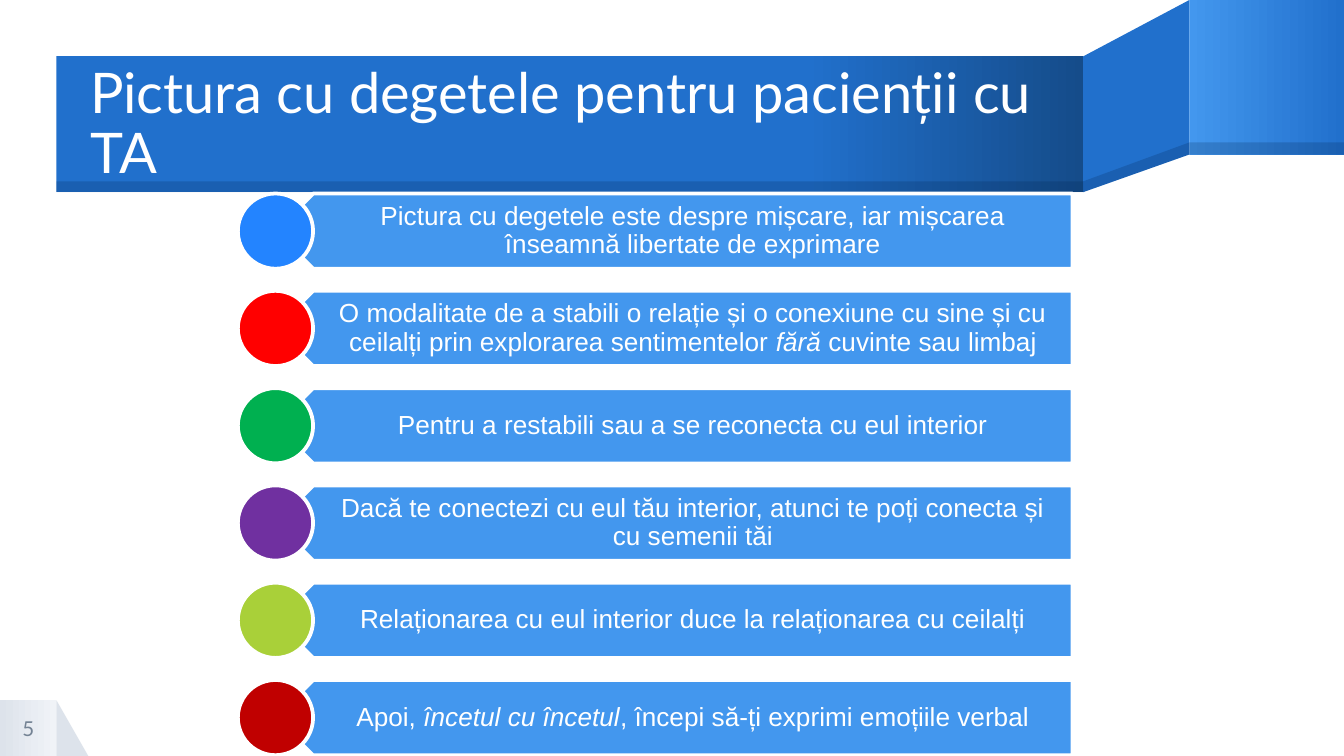
from copy import deepcopy

from lxml import etree
from pptx import Presentation
from pptx.dml.color import RGBColor
from pptx.enum.shapes import MSO_SHAPE
from pptx.enum.text import MSO_ANCHOR, MSO_AUTO_SIZE, PP_ALIGN
from pptx.oxml.ns import qn
from pptx.util import Inches, Pt

RECT, TRIANGLE = MSO_SHAPE.RECTANGLE, MSO_SHAPE.RIGHT_TRIANGLE
PENTAGON, OVAL = MSO_SHAPE.PENTAGON, MSO_SHAPE.OVAL
LEFT, CENTER = PP_ALIGN.LEFT, PP_ALIGN.CENTER

WHITE = RGBColor(0xFF, 0xFF, 0xFF)
BLUE = RGBColor(0x21, 0x70, 0xCC)
LIGHT_BLUE = RGBColor(0x43, 0x97, 0xEE)
DARK_BLUE = RGBColor(0x15, 0x4C, 0x8A)
NAVY = RGBColor(0x00, 0x1F, 0x46)
GREY = RGBColor(0xDD, 0xE3, 0xEB)
PALE_GREY = RGBColor(0xF0, 0xF3, 0xF7)
NUMBER_GREY = RGBColor(0x74, 0x83, 0x94)

TITLE = "Pictura cu degetele pentru pacienții cu TA"
PAGE_NUMBER = "5"

# Circle colour, then text runs; every second run is italic.
IDEAS = [
    (RGBColor(0x23, 0x84, 0xFF),
     ["Pictura cu degetele este despre mișcare, iar mișcarea înseamnă libertate de exprimare"]),
    (RGBColor(0xFF, 0x00, 0x00),
     ["O modalitate de a stabili o relație și o conexiune cu sine și cu ceilalți "
      "prin explorarea sentimentelor ", "fără ", "cuvinte sau limbaj"]),
    (RGBColor(0x00, 0xB0, 0x50),
     ["Pentru a restabili sau a se reconecta cu eul interior"]),
    (RGBColor(0x70, 0x30, 0xA0),
     ["Dacă te conectezi cu eul tău interior, atunci te poți conecta și cu semenii tăi"]),
    (RGBColor(0xA9, 0xD0, 0x39),
     ["Relaționarea cu eul interior duce la relaționarea cu ceilalți"]),
    (RGBColor(0xC0, 0x00, 0x00),
     ["Apoi, ", "încetul cu încetul", ", începi să-ți exprimi emoțiile verbal"]),
]

# Ribbon edges: banner, fold and right-hand tail.
BANNER_LEFT, FOLD_LEFT, FOLD_RIGHT, SLIDE_RIGHT = 0.42, 8.06, 8.85, 10
BANNER_TOP, BANNER_SHADE, BANNER_BOTTOM = 0.42, 1.35, 1.43
TAIL_SHADE, TAIL_BOTTOM = 1.06, 1.15
CORNER_TOP, CORNER_SIZE = 5.21, 0.42

FIRST_ROW_TOP, LAST_ROW_TOP, ROW_HEIGHT = 1.44, 5.06, 0.56
ROW_PITCH = (LAST_ROW_TOP - FIRST_ROW_TOP) / (len(IDEAS) - 1)
CIRCLE_LEFT, BAR_LEFT, TEXT_LEFT, BAR_RIGHT = 1.77, 2.05, 2.19, 7.98

IDEA_FORMAT = {"name": "Arial", "size": Pt(14)}
TITLE_FORMAT = {"name": "Lato", "size": Pt(30)}
NUMBER_FORMAT = {"name": "Lato", "size": Pt(11)}


def paint(shape, color, outlined=False, alpha=None):
    shape.shadow.inherit = False
    shape.fill.solid()
    shape.fill.fore_color.rgb = color
    if alpha is not None:
        srgb = shape.element.spPr.find(".//" + qn("a:srgbClr"))
        etree.SubElement(srgb, qn("a:alpha"), val=str(alpha * 1000))
    if outlined:
        shape.line.color.rgb = WHITE
        shape.line.width = Pt(2)
    else:
        shape.line.fill.background()


def paint_gradient(shape, stops):
    """Fill left to right with (position from 0 to 1, colour) stops."""
    paint(shape, stops[0][1])
    shape.fill.gradient()
    shape.fill.gradient_angle = 0
    stop_list = shape.element.spPr.find(".//" + qn("a:gsLst"))
    while len(stop_list) < len(stops):
        stop_list.append(deepcopy(stop_list[0]))
    for stop, (position, color) in zip(shape.fill.gradient_stops, stops):
        stop.position = position
        stop.color.rgb = color


def add_box(shapes, kind, left, top, right, bottom):
    return shapes.add_shape(kind, Inches(left), Inches(top),
                            Inches(right - left), Inches(bottom - top))


def add_fold(shapes, corners):
    points = [(Inches(x), Inches(y)) for x, y in corners]
    builder = shapes.build_freeform(*points[0])
    builder.add_line_segments(points[1:], close=True)
    return builder.convert_to_shape()


def write(shape, runs, formats, color, align, margins=(0, 0, 0, 0), spacing=0.9):
    frame = shape.text_frame
    frame.word_wrap = True
    frame.auto_size = MSO_AUTO_SIZE.NONE
    frame.vertical_anchor = MSO_ANCHOR.MIDDLE
    for side, margin in zip(("left", "top", "right", "bottom"), margins):
        setattr(frame, f"margin_{side}", Inches(margin))
    paragraph = frame.paragraphs[0]
    paragraph.alignment = align
    paragraph.line_spacing = spacing
    for index, words in enumerate(runs):
        run = paragraph.add_run()
        run.text = words
        for key, value in formats.items():
            setattr(run.font, key, value)
        run.font.italic = index % 2 == 1
        run.font.color.rgb = color


def add_corner(shapes):
    bottom = CORNER_TOP + CORNER_SIZE
    paint(add_box(shapes, TRIANGLE, CORNER_SIZE, CORNER_TOP, 0.66, bottom), GREY)
    square = add_box(shapes, RECT, 0, CORNER_TOP, CORNER_SIZE, bottom)
    paint_gradient(square, [(0, GREY), (1, PALE_GREY)])


def add_ribbon(shapes):
    paint(add_fold(shapes, [(FOLD_RIGHT, 0), (FOLD_LEFT, BANNER_TOP),
                            (FOLD_LEFT, BANNER_BOTTOM), (FOLD_RIGHT, TAIL_BOTTOM)]), BLUE)
    tail = add_box(shapes, RECT, FOLD_RIGHT, 0, SLIDE_RIGHT, TAIL_BOTTOM)
    paint_gradient(tail, [(0, LIGHT_BLUE), (1, BLUE)])
    banner = add_box(shapes, RECT, BANNER_LEFT, BANNER_TOP, FOLD_LEFT, BANNER_BOTTOM)
    paint_gradient(banner, [(0, BLUE), (0.73, BLUE), (1, DARK_BLUE)])
    shades = [
        add_fold(shapes, [(FOLD_RIGHT, TAIL_SHADE), (FOLD_LEFT, BANNER_SHADE),
                          (FOLD_LEFT, BANNER_BOTTOM), (FOLD_RIGHT, TAIL_BOTTOM)]),
        add_box(shapes, RECT, FOLD_RIGHT, TAIL_SHADE, SLIDE_RIGHT, TAIL_BOTTOM),
        add_box(shapes, RECT, BANNER_LEFT, BANNER_SHADE, FOLD_LEFT, BANNER_BOTTOM),
    ]
    for shade in shades:
        paint(shade, NAVY, alpha=20)


def place_title(shapes):
    title = shapes.title
    title.left, title.top = Inches(0.67), Inches(0.43)
    title.width, title.height = Inches(7.39), Inches(1.01)
    write(title, [TITLE], TITLE_FORMAT, WHITE, LEFT)
    title.element.getparent().append(title.element)  # in front of the ribbon


def add_idea(shapes, row, color, runs):
    top = FIRST_ROW_TOP + row * ROW_PITCH
    bottom = top + ROW_HEIGHT
    bar = add_box(shapes, PENTAGON, BAR_LEFT, top, BAR_RIGHT, bottom)
    bar.rotation = 180
    paint(bar, LIGHT_BLUE, outlined=True)
    idea = shapes.add_textbox(Inches(TEXT_LEFT), Inches(top),
                              Inches(BAR_RIGHT - TEXT_LEFT), Inches(ROW_HEIGHT))
    write(idea, runs, IDEA_FORMAT, WHITE, CENTER, margins=(0.25, 0.06, 0.11, 0.06))
    circle = add_box(shapes, OVAL, CIRCLE_LEFT, top, CIRCLE_LEFT + ROW_HEIGHT, bottom)
    paint(circle, color, outlined=True)


def add_page_number(shapes):
    number = shapes.add_textbox(0, Inches(CORNER_TOP),
                                Inches(CORNER_SIZE), Inches(CORNER_SIZE))
    write(number, [PAGE_NUMBER], NUMBER_FORMAT, NUMBER_GREY, CENTER, spacing=1.0)


def main():
    deck = Presentation()
    deck.slide_width = Inches(SLIDE_RIGHT)
    deck.slide_height = deck.slide_width * 9 // 16
    title_only = deck.slide_layouts[5]
    shapes = deck.slides.add_slide(title_only).shapes
    add_corner(shapes)
    add_ribbon(shapes)
    place_title(shapes)
    for row, (color, runs) in enumerate(IDEAS):
        add_idea(shapes, row, color, runs)
    add_page_number(shapes)
    deck.save("out.pptx")


if __name__ == "__main__":
    main()
